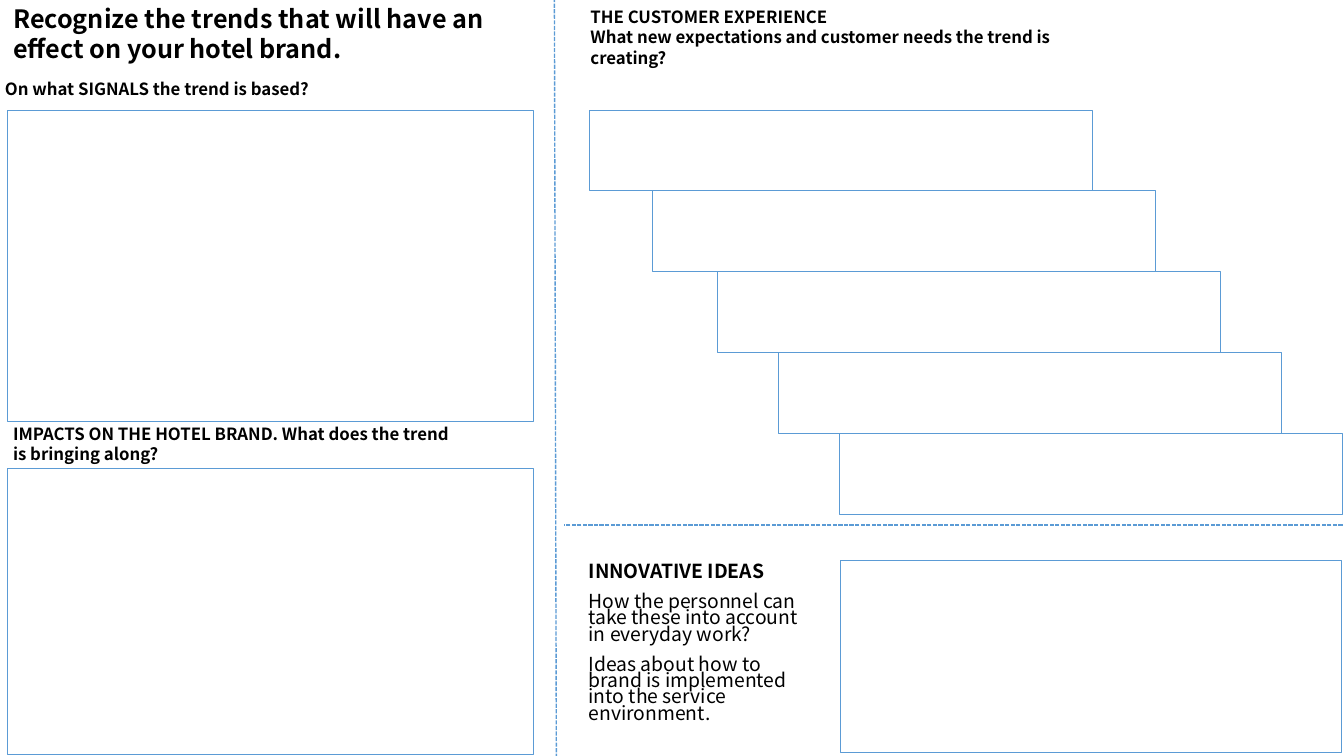
from pptx import Presentation
from pptx.dml.color import RGBColor
from pptx.enum.dml import MSO_LINE
from pptx.enum.shapes import MSO_CONNECTOR, MSO_SHAPE
from pptx.enum.text import MSO_ANCHOR, MSO_AUTO_SIZE, PP_ALIGN
from pptx.util import Pt
from lxml.etree import SubElement
from pptx.oxml.ns import qn

COLORS = {"text": "000000", "line": "5B9BD5"}
FONT = "Noto Sans CJK KR"


def place(shape, left, top, width, height):
    shape.left, shape.top = Pt(left), Pt(top)
    shape.width, shape.height = Pt(width), Pt(height)


def write(shape, texts, size, anchor=MSO_ANCHOR.TOP):
    """Fill the shape with bold, left-aligned paragraphs and return them."""
    frame = shape.text_frame
    frame.text = "\n".join(texts)
    frame.word_wrap = True
    frame.auto_size = MSO_AUTO_SIZE.NONE
    frame.vertical_anchor = anchor
    for paragraph in frame.paragraphs:
        paragraph.alignment = PP_ALIGN.LEFT
        paragraph.space_before = Pt(0)
        paragraph.font.name = FONT
        paragraph.font.size = Pt(size)
        paragraph.font.bold = True
        paragraph.font.color.rgb = RGBColor.from_string(COLORS["text"])
    return frame.paragraphs


prs = Presentation()
prs.slide_width, prs.slide_height = Pt(960), Pt(540)
slide = prs.slides.add_slide(prs.slide_layouts[1])
title, ideas = slide.placeholders

# Title and list of ideas
place(title, 2.2, -3.6, 357.8, 54.7)
write(title, ["Recognize the trends that will have an effect on your hotel brand."],
      18, MSO_ANCHOR.MIDDLE)

place(ideas, 413.3, 400.3, 177.1, 124.6)
idea_lines = write(ideas, [
    "INNOVATIVE IDEAS",
    "How the personnel can take these into account in everyday work?",
    "Ideas about how to brand is implemented into the service environment.",
], 13.8)
for number, paragraph in enumerate(idea_lines):
    paragraph.line_spacing = 0.7
    paragraph.space_before = Pt(10 if number else 0)
    paragraph.font.bold = number == 0
    properties = paragraph._p.get_or_add_pPr()
    properties.set("marL", "0")
    properties.set("indent", "0")
    bullet = SubElement(properties, qn("a:buNone"))
    properties.find(qn("a:defRPr")).addprevious(bullet)

# Section headings
headings = [
    (-3.6, 52.6, 375.8, 21.8, ["On what SIGNALS the trend is based?"]),
    (2.2, 298.8, 330.5, 36.3,
     ["IMPACTS ON THE HOTEL BRAND. What does the trend is bringing along?"]),
    (414.7, 1.5, 357.8, 72,
     ["THE CUSTOMER EXPERIENCE",
      "What new expectations and customer needs the trend is creating?"]),
]
for left, top, width, height, texts in headings:
    heading = slide.shapes.add_textbox(Pt(left), Pt(top), Pt(width), Pt(height))
    write(heading, texts, 12)

# Empty answer boxes: signals, impacts, ideas, then the staircase of needs
answer_boxes = [
    (5, 78.5, 375.8, 222.5),
    (5, 334.8, 375.8, 203.8),
    (600.5, 400.3, 357.8, 136.8),
]
STEP_HEIGHT = 57.8
for step, left in enumerate([421.2, 465.8, 512.6, 555.8, 599.8]):
    answer_boxes.append((left, 78.5 + step * STEP_HEIGHT, 359.3, STEP_HEIGHT))
for left, top, width, height in answer_boxes:
    box = slide.shapes.add_shape(
        MSO_SHAPE.RECTANGLE, Pt(left), Pt(top), Pt(width), Pt(height))
    box.shadow.inherit = False
    box.fill.background()
    box.line.color.rgb = RGBColor.from_string(COLORS["line"])
    box.line.width = Pt(0.5)

# Dashed dividers
for x1, y1, x2, y2 in [(396, -1.4, 397.4, 540), (959, 375.1, 403.2, 375.1)]:
    divider = slide.shapes.add_connector(
        MSO_CONNECTOR.STRAIGHT, Pt(x1), Pt(y1), Pt(x2), Pt(y2))
    divider.line.color.rgb = RGBColor.from_string(COLORS["line"])
    divider.line.width = Pt(1)
    divider.line.dash_style = MSO_LINE.SQUARE_DOT
    SubElement(divider._element.spPr, qn("a:effectLst"))

prs.save("out.pptx")
